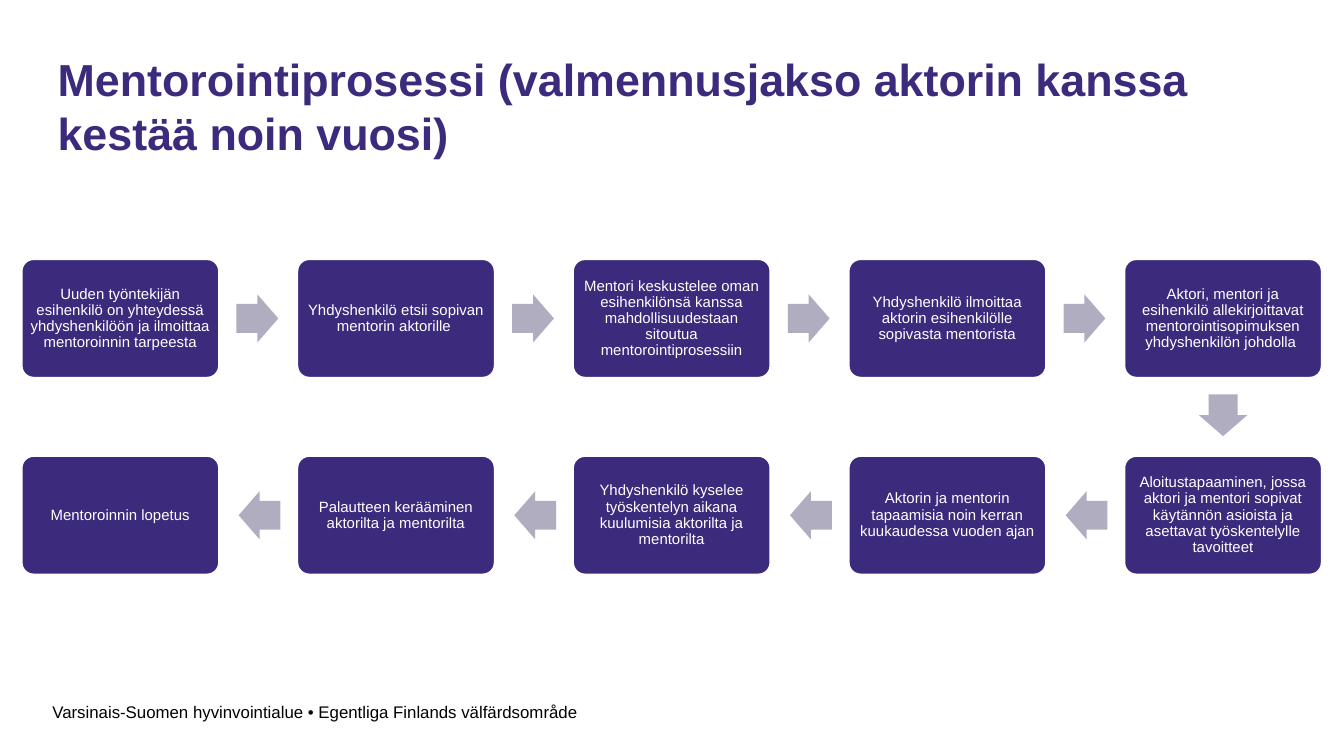
from typing import NamedTuple

from pptx import Presentation
from pptx.dml.color import RGBColor
from pptx.enum.shapes import MSO_SHAPE
from pptx.enum.text import MSO_ANCHOR, PP_ALIGN
from pptx.util import Cm, Pt

ROUND_RECT = MSO_SHAPE.ROUNDED_RECTANGLE
ARROW = MSO_SHAPE.RIGHT_ARROW
MIDDLE = MSO_ANCHOR.MIDDLE
TOP = MSO_ANCHOR.TOP
CENTER = PP_ALIGN.CENTER
LEFT = PP_ALIGN.LEFT

PURPLE = RGBColor(0x3C, 0x2B, 0x7C)
GREY = RGBColor(0xAF, 0xAD, 0xBF)
WHITE = RGBColor(0xFF, 0xFF, 0xFF)
BLACK = RGBColor(0x00, 0x00, 0x00)

# Grid of the process, in cm
GRID_LEFT, GRID_TOP = 0.41, 4.9
COL_PITCH, ROW_PITCH = 5.21, 3.72
BOX_W, BOX_H = 3.73, 2.24
ARROW_W, ARROW_H = 0.79, 0.91
COLS = 5

TITLE_FORMAT = {"name": "Arial", "size": Pt(24), "bold": True}
FOOTER_FORMAT = {"name": "Arial", "size": Pt(9), "bold": False}
STEP_FORMAT = {"name": "Arial", "size": Pt(8), "bold": False}
STEP_SPACING = {"line_spacing": 0.9, "space_after": Pt(2.8)}
STEP_MARGINS = dict.fromkeys(
    ("margin_left", "margin_top", "margin_right", "margin_bottom"), Cm(0.08))


class Step(NamedTuple):
    text: str
    col: int
    row: int


class Label(NamedTuple):
    text: str
    left: float
    top: float
    width: float
    height: float
    anchor: MSO_ANCHOR
    color: RGBColor
    font: dict


TITLE = Label("Mentorointiprosessi (valmennusjakso aktorin kanssa kestää noin vuosi)",
              0.84, 0.94, 23.9, 2.11, MIDDLE, PURPLE, TITLE_FORMAT)
FOOTER = Label("Varsinais-Suomen hyvinvointialue • Egentliga Finlands välfärdsområde",
               0.74, 13.13, 11.63, 0.64, TOP, BLACK, FOOTER_FORMAT)

STEP_TEXTS = [
    "Uuden työntekijän esihenkilö on yhteydessä yhdyshenkilöön ja ilmoittaa "
    "mentoroinnin tarpeesta",
    "Yhdyshenkilö etsii sopivan mentorin aktorille ",
    "Mentori keskustelee oman esihenkilönsä kanssa mahdollisuudestaan sitoutua "
    "mentorointiprosessiin",
    "Yhdyshenkilö ilmoittaa aktorin esihenkilölle sopivasta mentorista",
    "Aktori, mentori ja esihenkilö allekirjoittavat mentorointisopimuksen "
    "yhdyshenkilön johdolla ",
    "Aloitustapaaminen, jossa aktori ja mentori sopivat käytännön asioista ja "
    "asettavat työskentelylle tavoitteet",
    "Aktorin ja mentorin tapaamisia noin kerran kuukaudessa vuoden ajan",
    "Yhdyshenkilö kyselee työskentelyn aikana kuulumisia aktorilta ja mentorilta",
    "Palautteen kerääminen aktorilta ja mentorilta",
    "Mentoroinnin lopetus",
]


def set_all(target, values: dict) -> None:
    for key, value in values.items():
        setattr(target, key, value)


def write(tf, text: str, font: dict, color: RGBColor, anchor, align):
    tf.word_wrap = True
    tf.vertical_anchor = anchor
    p = tf.paragraphs[0]
    p.alignment = align
    r = p.add_run()
    r.text = text
    set_all(r.font, font)
    r.font.color.rgb = color
    return p


def add_label(s, label: Label) -> None:
    sp = s.shapes.add_textbox(Cm(label.left), Cm(label.top),
                              Cm(label.width), Cm(label.height))
    write(sp.text_frame, label.text, label.font, label.color, label.anchor, LEFT)


def place_steps(texts: list[str]) -> list[Step]:
    """Run the first row rightwards and the second row back leftwards."""
    steps = []
    for i, text in enumerate(texts):
        row, col = divmod(i, COLS)
        steps.append(Step(text, COLS - 1 - col if row else col, row))
    return steps


def add_step(s, step: Step) -> None:
    sp = s.shapes.add_shape(
        ROUND_RECT, Cm(GRID_LEFT + step.col * COL_PITCH),
        Cm(GRID_TOP + step.row * ROW_PITCH), Cm(BOX_W), Cm(BOX_H))
    sp.adjustments[0] = 0.1
    sp.shadow.inherit = False
    sp.fill.solid()
    sp.fill.fore_color.rgb = PURPLE
    sp.line.color.rgb = WHITE
    sp.line.width = Pt(1)
    set_all(sp.text_frame, STEP_MARGINS)
    p = write(sp.text_frame, step.text, STEP_FORMAT, WHITE, MIDDLE, CENTER)
    set_all(p, STEP_SPACING)


def add_arrow(s, start: Step, end: Step) -> None:
    # Offsets run from the centre of the starting box to the arrow's centre
    if end.row > start.row:
        dx, dy, rotation = 0, 1.83, 90
    elif end.col > start.col:
        dx, dy, rotation = 2.59, 0, 0
    else:
        dx, dy, rotation = -2.58, 0, 180
    x = GRID_LEFT + start.col * COL_PITCH + BOX_W / 2 + dx
    y = GRID_TOP + start.row * ROW_PITCH + BOX_H / 2 + dy
    sp = s.shapes.add_shape(ARROW, Cm(x - ARROW_W / 2), Cm(y - ARROW_H / 2),
                            Cm(ARROW_W), Cm(ARROW_H))
    sp.adjustments[0] = 0.6
    sp.adjustments[1] = 0.5
    sp.rotation = rotation
    sp.shadow.inherit = False
    sp.fill.solid()
    sp.fill.fore_color.rgb = GREY
    sp.line.fill.background()


def main() -> None:
    prs = Presentation()
    prs.slide_width, prs.slide_height = Cm(25.4), Cm(14.29)
    s = prs.slides.add_slide(prs.slide_layouts[6])

    # Footer and title
    add_label(s, FOOTER)
    add_label(s, TITLE)

    # Process steps and the arrows between them
    steps = place_steps(STEP_TEXTS)
    for step in steps:
        add_step(s, step)
    for start, end in zip(steps, steps[1:]):
        add_arrow(s, start, end)

    prs.save("out.pptx")


if __name__ == "__main__":
    main()
